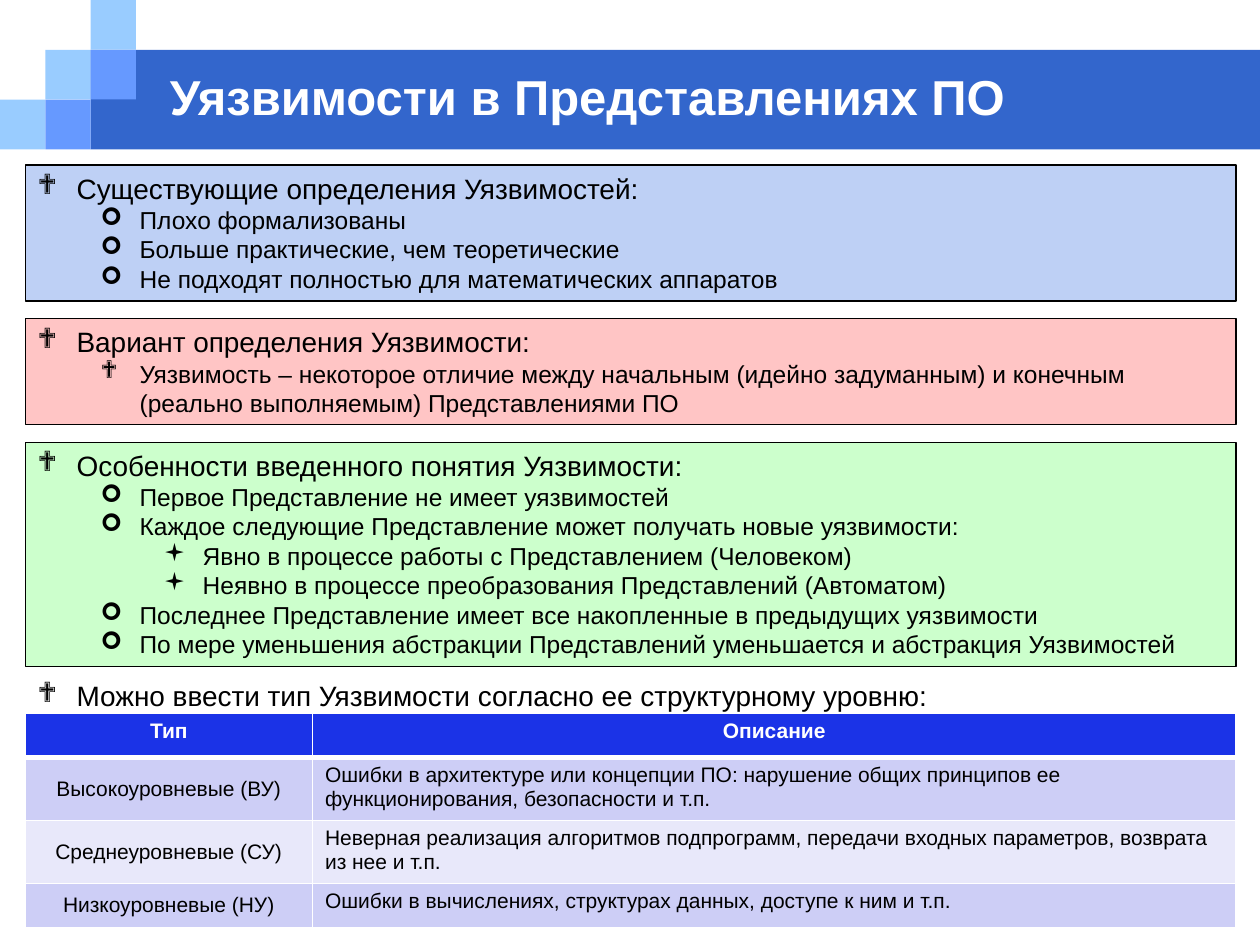
from lxml import etree
from pptx import Presentation, util as u
from pptx.dml.color import RGBColor
from pptx.enum import shapes, text
from pptx.oxml import ns

TITLE = "Уязвимости в Представлениях ПО"
FONT = "Arial"
LEFT, WIDTH = 0.2, 9.61
SQUARE_WIDTH, SQUARE_HEIGHT = 0.36, 0.395
SQUARES = [(0, 2, "99CCFF"), (1, 1, "99CCFF"), (2, 0, "99CCFF"),
           (2, 1, "6699FF"), (1, 2, "6699FF")]

PANEL_TOP = 1.31
PANELS = [
    (1.08, 0.14, "BED0F5", [
        (0, "❖", "Существующие определения Уязвимостей:"),
        (1, "➢", "Плохо формализованы"),
        (1, "➢", "Больше практические, чем теоретические"),
        (1, "➢", "Не подходят полностью для математических аппаратов"),
    ]),
    (0.84, 0.14, "FFC5C5", [
        (0, "❖", "Вариант определения Уязвимости:"),
        (1, "❖", "Уязвимость – некоторое отличие между начальным (идейно задуманным) "
                 "и конечным (реально выполняемым) Представлениями ПО"),
    ]),
    (1.78, 0.05, "CCFFCC", [
        (0, "❖", "Особенности введенного понятия Уязвимости:"),
        (1, "➢", "Первое Представление не имеет уязвимостей"),
        (1, "➢", "Каждое следующие Представление может получать новые уязвимости:"),
        (2, "▪", "Явно в процессе работы с Представлением (Человеком)"),
        (2, "▪", "Неявно в процессе преобразования Представлений (Автоматом)"),
        (1, "➢", "Последнее Представление имеет все накопленные в предыдущих уязвимости"),
        (1, "➢", "По мере уменьшения абстракции Представлений уменьшается и абстракция Уязвимостей"),
    ]),
    (0.37, 0, None, [
        (0, "❖", "Можно ввести тип Уязвимости согласно ее структурному уровню:"),
    ]),
]

TABLE_TOP = 5.66
COLUMNS = [2.28, 7.33]
ROWS = [
    (0.35, "1B33E7", "Тип", "Описание"),
    (0.5, "CDCEF6", "Высокоуровневые (ВУ)",
     "Ошибки в архитектуре или концепции ПО: нарушение общих принципов ее "
     "функционирования, безопасности и т.п."),
    (0.5, "E8E8FA", "Среднеуровневые (СУ)",
     "Неверная реализация алгоритмов подпрограмм, передачи входных параметров, "
     "возврата из нее и т.п."),
    (0.35, "CDCEF6", "Низкоуровневые (НУ)",
     "Ошибки в вычислениях, структурах данных, доступе к ним и т.п."),
]


def color(value):
    return RGBColor.from_string(value)


def set_font(paragraph, size, value="000000", bold=False):
    font = paragraph.font
    font.name, font.size, font.bold = FONT, u.Pt(size), bold
    font.color.rgb = color(value)


def add_rectangle(slide, left, top, width, height, fill, outline=None):
    shape = slide.shapes.add_shape(shapes.MSO_SHAPE.RECTANGLE, u.Inches(left),
                                   u.Inches(top), u.Inches(width), u.Inches(height))
    shape.shadow.inherit = False
    shape.fill.solid()
    shape.fill.fore_color.rgb = color(fill)
    if outline:
        shape.line.color.rgb = color(outline)
        shape.line.width = u.Pt(0.75)
    else:
        shape.line.fill.background()
    return shape


def add_textbox(slide, left, top, width, height):
    return slide.shapes.add_textbox(u.Inches(left), u.Inches(top),
                                    u.Inches(width), u.Inches(height))


def add_bullet(paragraph, level, symbol):
    paragraph.level = level
    properties = paragraph._p.get_or_add_pPr()
    properties.set("marL", str(u.Inches(0.31 + 0.5 * level)))
    properties.set("indent", str(u.Inches(-0.31)))
    etree.SubElement(properties, ns.qn("a:buFont"), typeface="Wingdings")
    etree.SubElement(properties, ns.qn("a:buChar"), char=symbol)


def add_panel(slide, top, height, fill, items):
    if fill:
        panel = add_rectangle(slide, LEFT, top, WIDTH, height, fill, "000000")
    else:
        panel = add_textbox(slide, LEFT, top, WIDTH, height)
    frame = panel.text_frame
    frame.word_wrap = True
    frame.vertical_anchor = text.MSO_ANCHOR.TOP
    for index, (level, symbol, wording) in enumerate(items):
        paragraph = frame.add_paragraph() if index else frame.paragraphs[0]
        paragraph.text = wording
        paragraph.alignment = text.PP_ALIGN.LEFT
        add_bullet(paragraph, level, symbol)
        set_font(paragraph, 14 if level else 16)


def set_borders(cell, widths):
    properties = cell._tc.get_or_add_tcPr()
    for index, (side, width) in enumerate(widths.items()):
        line = etree.Element(ns.qn("a:ln" + side), w=str(u.Pt(width)))
        fill = etree.SubElement(line, ns.qn("a:solidFill"))
        etree.SubElement(fill, ns.qn("a:srgbClr"), val="FFFFFF")
        properties.insert(index, line)


def add_type_table(slide):
    height = sum(row[0] for row in ROWS)
    table = slide.shapes.add_table(len(ROWS), len(COLUMNS), u.Inches(LEFT),
                                   u.Inches(TABLE_TOP), u.Inches(WIDTH),
                                   u.Inches(height)).table
    for column, width in zip(table.columns, COLUMNS):
        column.width = u.Inches(width)
    for row, (row_height, fill, *wordings) in enumerate(ROWS):
        table.rows[row].height = u.Inches(row_height)
        header = row == 0
        for column, wording in enumerate(wordings):
            cell = table.cell(row, column)
            cell.text = wording
            cell.fill.solid()
            cell.fill.fore_color.rgb = color(fill)
            set_borders(cell, {"L": 1, "R": 1, "T": 3 if row == 1 else 1,
                               "B": 3 if header else 1})
            paragraph = cell.text_frame.paragraphs[0]
            set_font(paragraph, 12, "FFFFFF" if header else "000000", header)
            if header or column == 0:
                paragraph.alignment = text.PP_ALIGN.CENTER
            if not header and column == 0:
                cell.vertical_anchor = text.MSO_ANCHOR.MIDDLE


def add_header(slide):
    band_left = 2 * SQUARE_WIDTH
    add_rectangle(slide, band_left, SQUARE_HEIGHT, 10 - band_left,
                  2 * SQUARE_HEIGHT, "3366CC")
    for column, row, fill in SQUARES:
        add_rectangle(slide, column * SQUARE_WIDTH, row * SQUARE_HEIGHT,
                      SQUARE_WIDTH, SQUARE_HEIGHT, fill)
    title = add_textbox(slide, 1.25, 0.5, 8.08, 0.53).text_frame
    title.word_wrap = True
    title.vertical_anchor = text.MSO_ANCHOR.MIDDLE
    title.text = TITLE
    set_font(title.paragraphs[0], 28, "FFFFFF", True)


def main():
    presentation = Presentation()
    presentation.slide_width, presentation.slide_height = u.Inches(10), u.Inches(7.5)
    slide = presentation.slides.add_slide(presentation.slide_layouts[6])
    add_header(slide)
    top = PANEL_TOP
    for height, gap, fill, items in PANELS:
        add_panel(slide, top, height, fill, items)
        top += height + gap
    add_type_table(slide)
    presentation.save("out.pptx")


if __name__ == "__main__":
    main()
